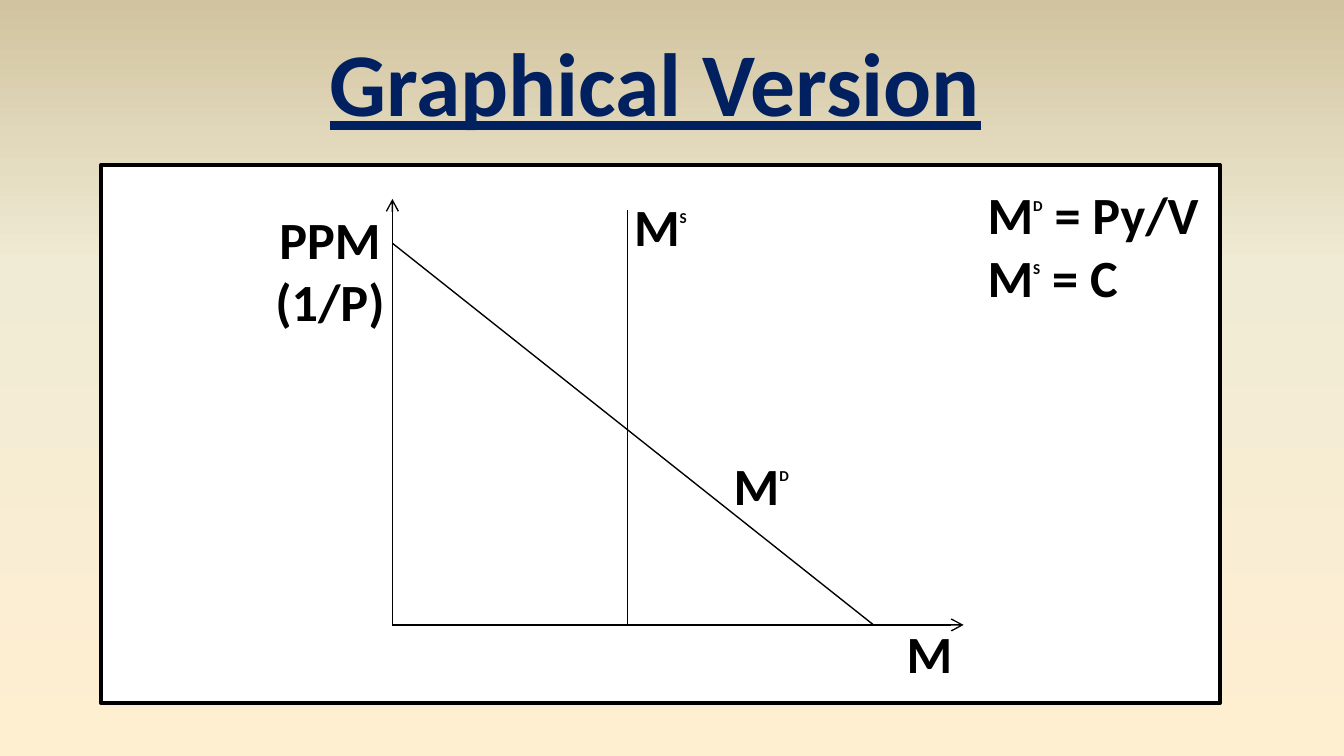
"""Build a slide that graphs money supply and money demand."""
from copy import deepcopy
from dataclasses import dataclass
from typing import Optional

from pptx import Presentation
from pptx import util as u
from pptx.dml.color import RGBColor
from pptx.enum import shapes, text
from pptx.oxml import ns, xmlchemy


@dataclass(frozen=True)
class Theme:
    face: str = "Calibri"
    navy: str = "002060"
    black: str = "000000"
    white: str = "FFFFFF"
    sky: tuple = ((0, "FFEFD1"), (0.65, "F0EBD5"), (1, "D1C39F"))
    head: int = 48
    body: int = 28
    sup: int = 14
    thin: float = 0.75
    thick: float = 2
    raised: str = "90000"


@dataclass(frozen=True)
class Line:
    start: tuple
    end: tuple
    arrow: bool = False


@dataclass(frozen=True)
class Run:
    words: str
    sup: bool = False


@dataclass(frozen=True)
class Label:
    box: tuple
    rows: tuple
    align: Optional[int] = text.PP_ALIGN.CENTER


THEME = Theme()
WIDTH = 10
LEFT, BASE, MID = 2.92, 4.65, 4.67
SIZE = (0.67, 0.57)
LINES = (
    Line((MID, 1.56), (MID, BASE)),
    Line((LEFT, 1.81), (6.5, BASE)),
    Line((LEFT, BASE), (LEFT, 1.48), True),
    Line((LEFT, BASE), (7.17, BASE), True),
)
M, D, S = Run("M"), Run("D", True), Run("S", True)
RULES = Label((7.25, 1.31, 1.92, 1.04),
              ((M, D, Run(" = Py/V")), (M, S, Run(" = C"))), None)
LABELS = (
    Label((5.33, 3.32, *SIZE), ((M, D),)),
    Label((4.58, 1.4, *SIZE), ((M, S),)),
    Label((1.83, 1.49, 1.25, 1.04), ((Run("PPM"),), (Run("(1/P)"),))),
    Label((6.58, 4.57, *SIZE), ((M,),)),
)


def rgb(code: str) -> RGBColor:
    """Turn a hex code into a colour."""
    return RGBColor.from_string(code)


def style(font, color: str, size: float, **more) -> None:
    """Apply the theme face and the given format values."""
    for key, value in dict(name=THEME.face, size=u.Pt(size), bold=True, **more).items():
        setattr(font, key, value)
    font.color.rgb = rgb(color)


def paint(slide) -> None:
    """Fill the background with the vertical gradient."""
    fill = slide.background.fill
    fill.gradient()
    fill.gradient_angle = 90
    stops = slide._element.find(".//" + ns.qn("a:gsLst"))
    stops.append(deepcopy(stops[0]))
    for stop, (place, code) in zip(fill.gradient_stops, THEME.sky):
        stop.position = place
        stop.color.rgb = rgb(code)


def title(slide, words: str) -> None:
    """Place and format the title."""
    shape = slide.shapes.title
    for key, value in dict(left=2.33, top=0.15, width=5.09, height=0.91).items():
        setattr(shape, key, u.Inches(value))
    frame = shape.text_frame
    frame.word_wrap = False
    frame.auto_size = text.MSO_AUTO_SIZE.SHAPE_TO_FIT_TEXT
    frame.vertical_anchor = text.MSO_ANCHOR.TOP
    para = frame.paragraphs[0]
    para.alignment = text.PP_ALIGN.CENTER
    run = para.add_run()
    run.text = words
    style(run.font, THEME.navy, THEME.head, underline=True)


def panel(slide, box: tuple) -> None:
    """Draw the framed white panel."""
    shape = slide.shapes.add_shape(shapes.MSO_SHAPE.RECTANGLE, *map(u.Inches, box))
    shape.shadow.inherit = False
    shape.fill.solid()
    shape.fill.fore_color.rgb = rgb(THEME.white)
    shape.line.color.rgb = rgb(THEME.black)
    shape.line.width = u.Pt(THEME.thick)


def draw(slide, item: Line) -> None:
    """Draw one straight line, with an arrowhead if asked."""
    wire = slide.shapes.add_connector(
        shapes.MSO_CONNECTOR.STRAIGHT, *map(u.Inches, item.start + item.end))
    wire.line.color.rgb = rgb(THEME.black)
    wire.line.width = u.Pt(THEME.thin)
    if item.arrow:
        tail = xmlchemy.OxmlElement("a:tailEnd")
        tail.set("type", "arrow")
        wire.line._get_or_add_ln().append(tail)
    wire._element.spPr.append(xmlchemy.OxmlElement("a:effectLst"))


def write(slide, item: Label) -> None:
    """Write one label, raising its superscripts."""
    frame = slide.shapes.add_textbox(*map(u.Inches, item.box)).text_frame
    frame.word_wrap = True
    frame.auto_size = text.MSO_AUTO_SIZE.SHAPE_TO_FIT_TEXT
    for num, row in enumerate(item.rows):
        para = frame.add_paragraph() if num else frame.paragraphs[0]
        para.alignment = item.align
        for part in row:
            run = para.add_run()
            run.text = part.words
            style(run.font, THEME.black, THEME.sup if part.sup else THEME.body)
            if part.sup:
                run._r.get_or_add_rPr().set("baseline", THEME.raised)


def main() -> None:
    """Build and save the slide."""
    deck = Presentation()
    deck.slide_width, deck.slide_height = u.Inches(WIDTH), u.Inches(WIDTH * 9 / 16)
    slide = deck.slides.add_slide(deck.slide_layouts[5])
    paint(slide)
    title(slide, "Graphical Version")
    panel(slide, (0.75, 1.23, 8.33, 4))
    write(slide, RULES)
    for line in LINES:
        draw(slide, line)
    for label in LABELS:
        write(slide, label)
    deck.save("out.pptx")


if __name__ == "__main__":
    main()
